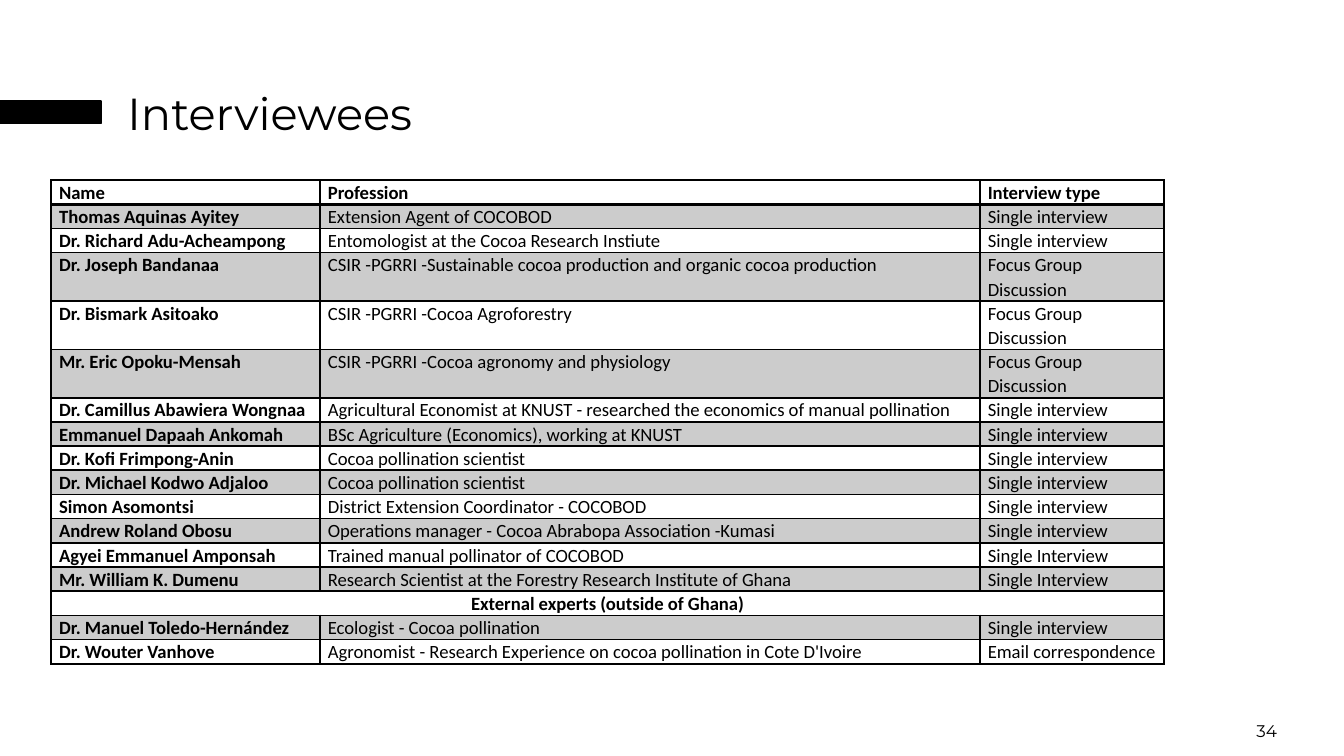
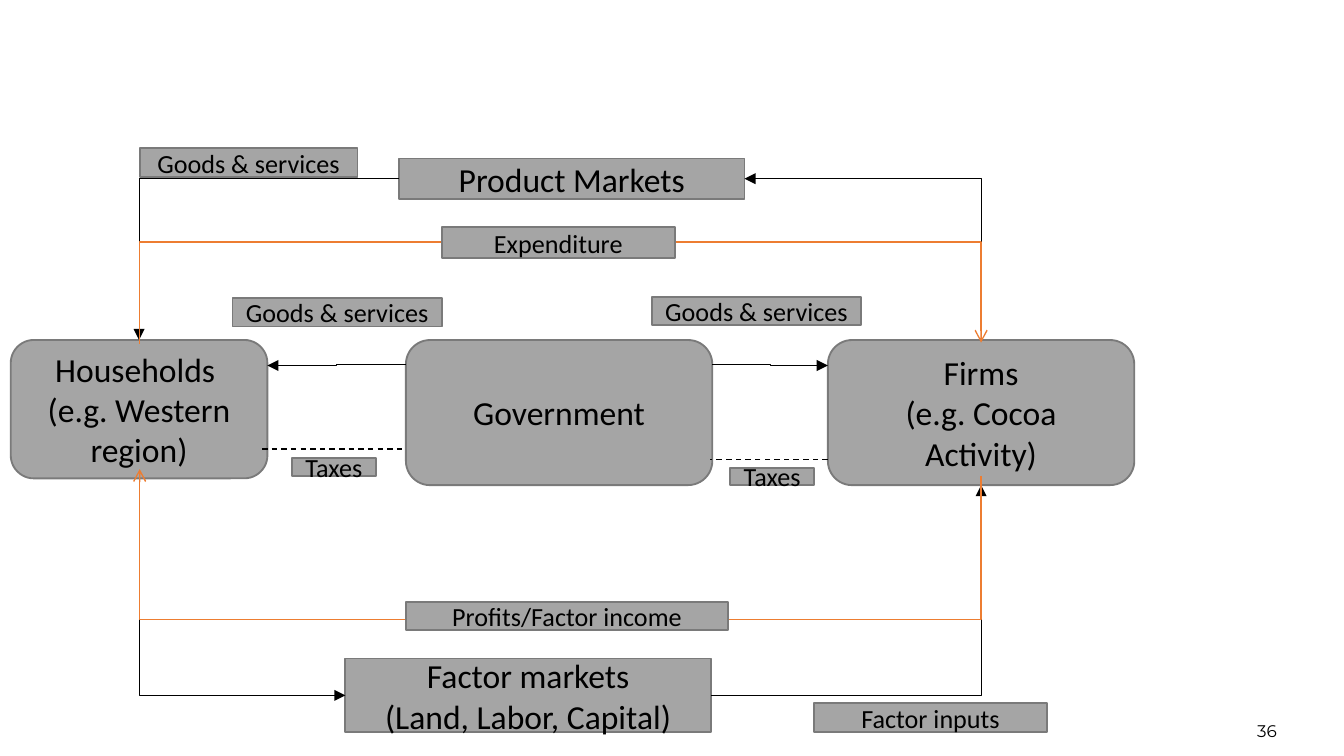
from lxml.etree import SubElement
from pptx import Presentation
from pptx.dml.color import RGBColor
from pptx.enum.dml import MSO_LINE
from pptx.enum.shapes import MSO_CONNECTOR, MSO_SHAPE
from pptx.enum.text import MSO_ANCHOR, PP_ALIGN
from pptx.oxml.ns import qn
from pptx.util import Inches, Pt

BLACK, GREY, EDGE, ORANGE = "000000", "A5A5A5", "7A7A7A", "ED7D31"
HEAD, BODY = "Montserrat", "Calibri"
LEFT, MID, RIGHT = PP_ALIGN.LEFT, PP_ALIGN.CENTER, PP_ALIGN.RIGHT
ELBOW = MSO_CONNECTOR.ELBOW

deck = Presentation()
deck.slide_width, deck.slide_height = Inches(10), Inches(5.625)
UNIT = deck.slide_width // 100  # the grid has 100 columns, with square cells


def paint(fill, tint):
    fill.solid()
    fill.fore_color.rgb = RGBColor.from_string(tint)


def write(frame, text, size=10, face=BODY, bold=False, align=LEFT, space=None,
          pad=None, anchor=None):
    """Fill a frame, one paragraph per line; pad is (side, top) in inches."""
    frame.word_wrap = True
    if pad:
        frame.margin_left = frame.margin_right = Inches(pad[0])
        frame.margin_top = frame.margin_bottom = Inches(pad[1])
    if anchor is not None:
        frame.vertical_anchor = anchor
    frame.text = text
    for para in frame.paragraphs:
        para.alignment, para.line_spacing = align, space
        font = para.runs[0].font
        font.size, font.name, font.bold = Pt(size), face, bold
        paint(font.fill, BLACK)


# Both slides, with their page numbers
pages = []
for number in ("34", "36"):
    page = deck.slides.add_slide(deck.slide_layouts[6])
    spot = [int(n * UNIT) for n in (89.9, 53.6, 5.1, 1.5)]
    write(page.shapes.add_textbox(*spot).text_frame, number, size=9, face=HEAD,
          align=RIGHT, pad=(0, 0))
    pages.append(page.shapes)
people, flow = pages

# Interviewees: title, bar and table
spot = [int(n * UNIT) for n in (8.5, 5.9, 74.8, 4.7)]
write(people.add_textbox(*spot).text_frame, "Interviewees", size=24, face=HEAD)

spot = [int(n * UNIT) for n in (0, 7.5, 7.5, 1.7)]
bar = people.add_shape(MSO_SHAPE.RECTANGLE, *spot)
bar.shadow.inherit = False
paint(bar.fill, BLACK)
paint(bar.line.fill, BLACK)
bar.line.width = Pt(1)

SINGLE, GROUP = "Single interview", "Focus Group Discussion"
rows = [
    ("Name", "Profession", "Interview type"),
    ("Thomas Aquinas Ayitey", "Extension Agent of COCOBOD", SINGLE),
    ("Dr. Richard Adu-Acheampong", "Entomologist at the Cocoa Research Instiute", SINGLE),
    ("Dr. Joseph Bandanaa",
     "CSIR -PGRRI -Sustainable cocoa production and organic cocoa production", GROUP),
    ("Dr. Bismark Asitoako", "CSIR -PGRRI -Cocoa Agroforestry", GROUP),
    ("Mr. Eric Opoku-Mensah", "CSIR -PGRRI -Cocoa agronomy and physiology", GROUP),
    ("Dr. Camillus Abawiera Wongnaa",
     "Agricultural Economist at KNUST - researched the economics of manual pollination",
     SINGLE),
    ("Emmanuel Dapaah Ankomah", "BSc Agriculture (Economics), working at KNUST", SINGLE),
    ("Dr. Kofi Frimpong-Anin", "Cocoa pollination scientist", SINGLE),
    ("Dr. Michael Kodwo Adjaloo", "Cocoa pollination scientist", SINGLE),
    ("Simon Asomontsi", "District Extension Coordinator - COCOBOD", SINGLE),
    ("Andrew Roland Obosu", "Operations manager - Cocoa Abrabopa Association -Kumasi",
     SINGLE),
    ("Agyei Emmanuel Amponsah", "Trained manual pollinator of COCOBOD",
     "Single Interview"),
    ("Mr. William K. Dumenu",
     "Research Scientist at the Forestry Research Institute of Ghana", "Single Interview"),
    ("External experts (outside of Ghana)",),
    ("Dr. Manuel Toledo-Hernández", "Ecologist - Cocoa pollination", SINGLE),
    ("Dr. Wouter Vanhove",
     "Agronomist - Research Experience on cocoa pollination in Cote D'Ivoire",
     "Email correspondence"),
]
spot = [int(n * UNIT) for n in (3.8, 13.4, 82.8, 36)]
grid = people.add_table(len(rows), 3, *spot).table
grid.first_row = grid.horz_banding = False
for col, wide in zip(grid.columns, (20, 49.1, 13.7)):
    col.width = int(wide * UNIT)

for r, row in enumerate(rows):
    grid.rows[r].height = int((3.6 if GROUP in row else 1.8) * UNIT)
    if len(row) == 1:
        grid.cell(r, 0).merge(grid.cell(r, 2))
    for c in range(3):
        cell = grid.cell(r, c)
        cell.margin_left = cell.margin_right = Inches(0.06)
        cell.margin_top = cell.margin_bottom = 0
        if c < len(row):
            write(cell.text_frame, row[c], bold=r == 0 or c == 0, space=1.07,
                  align=MID if len(row) == 1 else LEFT)
        props = cell._tc.get_or_add_tcPr()
        if r % 2:
            paint(cell.fill, BLACK)
            SubElement(props.find(".//" + qn("a:srgbClr")), qn("a:alpha"), val="20000")
        else:
            cell.fill.background()
        for i, side in enumerate(("lnL", "lnR", "lnT", "lnB")):
            thick = (r, side) in ((0, "lnB"), (1, "lnT"))
            edge = SubElement(props, qn("a:" + side), w=str(Pt(2 if thick else 1)))
            ink = SubElement(edge, qn("a:solidFill"))
            SubElement(ink, qn("a:srgbClr"), val=BLACK)
            props.insert(i, edge)

# Circular flow: main boxes, then the lines, then the labels over them
ROUND, RECT = MSO_SHAPE.ROUNDED_RECTANGLE, MSO_SHAPE.RECTANGLE
boxes = [
    (ROUND, "Households \n(e.g. Western region)", 18, (0.8, 25.3, 19.1, 10.3)),
    (ROUND, "Firms\n(e.g. Cocoa Activity)", 18, (61.6, 25.3, 22.8, 10.8)),
    (RECT, "Product Markets", 18, (29.7, 11.8, 25.7, 3)),
    (RECT, "Factor markets\n(Land, Labor, Capital)", 18, (25.7, 49, 27.2, 5.5)),
    (ROUND, "Government", 18, (30.2, 25.3, 22.8, 10.8)),
    (RECT, "Goods & services", 14, (10.4, 11, 16.2, 2.2)),
    (RECT, "Goods & services", 14, (17.3, 22.2, 15.6, 2.1)),
    (RECT, "Goods & services", 14, (48.5, 22.1, 15.6, 2.1)),
    (RECT, "Taxes", 14, (54.3, 34.8, 6.3, 1.3)),
    (RECT, "Taxes", 14, (21.7, 34.1, 6.3, 1.3)),
    (RECT, "Factor inputs", 14, (60.6, 52.3, 17.3, 2.2)),
    (RECT, "Profits/Factor income", 14, (30.2, 44.8, 24, 2.1)),
    (RECT, "Expenditure", 14, (32.9, 16.9, 17.3, 2.3)),
]
drawn = []
for kind, text, size, at in boxes:
    box = flow.add_shape(kind, *[int(n * UNIT) for n in at])
    box.shadow.inherit = False
    paint(box.fill, GREY)
    paint(box.line.fill, EDGE)
    box.line.width = Pt(1)
    write(box.text_frame, text, size=size, align=MID, anchor=MSO_ANCHOR.MIDDLE)
    drawn.append(box)
house, firm, goods, means = drawn[:4]

wires = []  # line, colour, points, arrow end, arrow type

# One bend: from the side of a market to the top or bottom of an actor
for start, side, end, face, tip in (
    (means, 1, house, 2, "headEnd"),
    (means, 3, firm, 2, "tailEnd"),
    (goods, 3, firm, 0, "headEnd"),
    (goods, 1, house, 0, "tailEnd"),
):
    wire = flow.add_connector(ELBOW, 0, 0, 0, 0)
    wire.begin_connect(start, side)
    wire.end_connect(end, face)
    wire._element.spPr.find(qn("a:prstGeom")).set("prst", "bentConnector2")
    wires.append((wire, BLACK, 0.5, tip, "triangle"))

# Between the government and its neighbours; taxes are dashed
for at, tip in (
    ((30.2, 27.1, 19.9, 27.2), "tailEnd"),
    ((53, 27.1, 61.6, 27.2), "tailEnd"),
    ((19.5, 33.4, 30.2, 33.4), None),
    ((61.6, 34.2, 52.8, 34.2), None),
):
    wire = flow.add_connector(ELBOW, *[int(n * UNIT) for n in at])
    if not tip:
        wire.line.dash_style = MSO_LINE.DASH
    wires.append((wire, BLACK, 0.5 if tip else 0.75, tip, "triangle"))

# Two bends: money loops, a quarter turn, rising slightly from start to end
for x0, y0, x1, rise, bend in ((73, 35.4, 10.4, 0.5, 46.1), (10.4, 25.6, 73, 0.1, 17.9)):
    midx, midy, half = (x0 + x1) / 2, y0 - rise / 2, (x0 - x1) / 2
    at = midx + rise / 2, midy - half, midx - rise / 2, midy + half
    wire = flow.add_connector(ELBOW, *[int(n * UNIT) for n in at])
    wire._element.spPr.find(qn("a:xfrm")).set("rot", "5400000")
    shape = wire._element.spPr.find(qn("a:prstGeom"))
    knobs = shape.find(qn("a:avLst"))
    if knobs is None:
        knobs = SubElement(shape, qn("a:avLst"))
    SubElement(knobs, qn("a:gd"), name="adj1",
               fmla=f"val {round((y0 - bend) / rise * 100000)}")
    wires.append((wire, ORANGE, 0.75, "tailEnd", "arrow"))

for wire, tint, width, tip, mark in wires:
    paint(wire.line.fill, tint)
    wire.line.width = Pt(width)
    if tip:
        SubElement(wire.line._get_or_add_ln(), qn("a:" + tip), type=mark)
    SubElement(wire._element.spPr, qn("a:effectLst"))

for label in drawn[5:]:
    flow._spTree.append(label._element)

deck.save("out.pptx")
